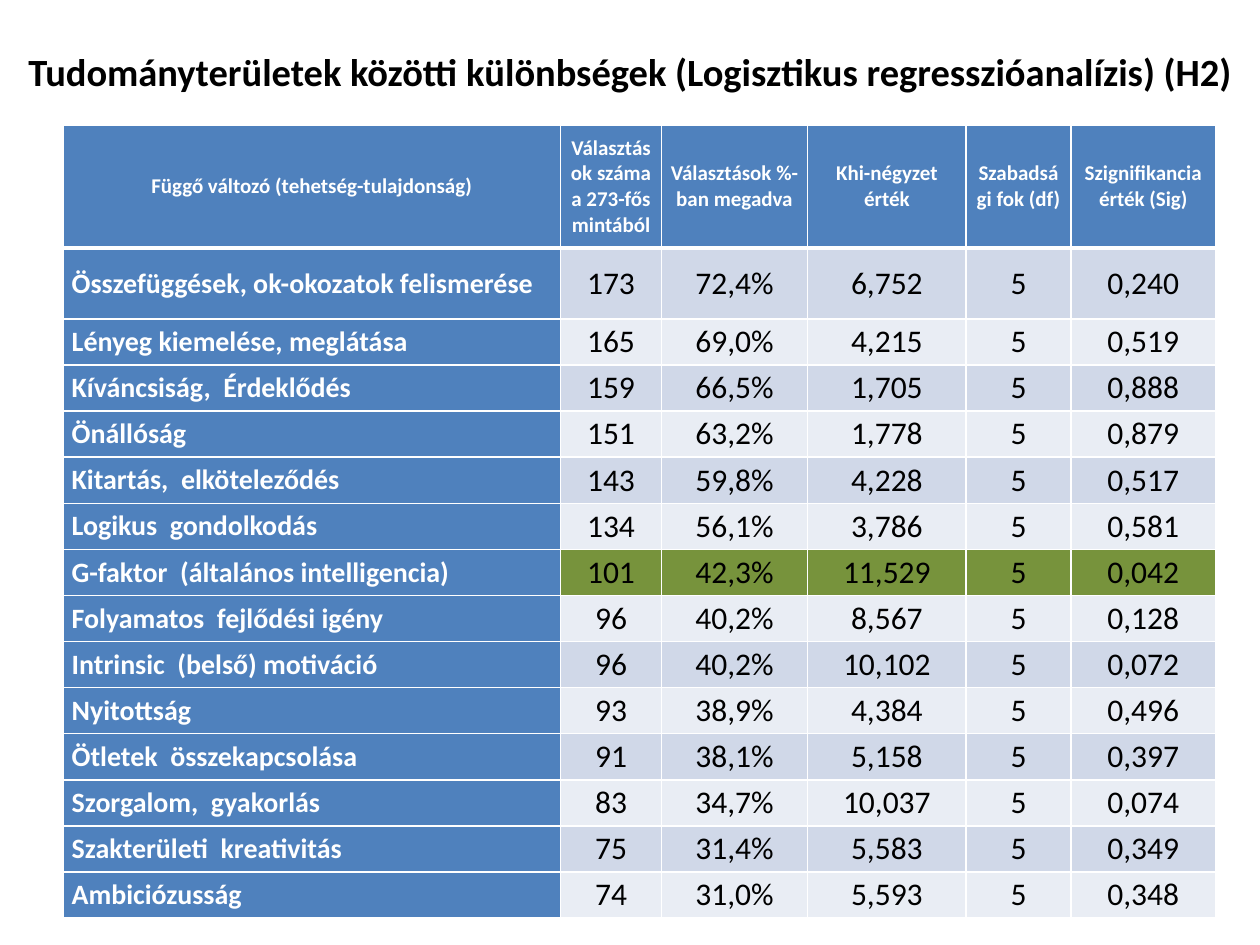
from lxml.etree import SubElement
from pptx import Presentation
from pptx.dml.color import RGBColor
from pptx.enum.text import MSO_VERTICAL_ANCHOR as Anchor, PP_PARAGRAPH_ALIGNMENT as Align
from pptx.oxml.ns import qn
from pptx.util import Pt

WHITE = RGBColor(0xFF, 0xFF, 0xFF)
BLACK = RGBColor(0x00, 0x00, 0x00)
BLUE = RGBColor(0x4F, 0x81, 0xBD)
BANDS = (RGBColor(0xE9, 0xED, 0xF4), RGBColor(0xD0, 0xD8, 0xE8))
GREEN = RGBColor(0x77, 0x93, 0x3C)

TITLE = "Tudományterületek közötti különbségek (Logisztikus regresszióanalízis) (H2)"
HEADERS = (
    "Függő változó (tehetség-tulajdonság)",
    "Választások száma a 273-fős mintából",
    "Választások %-ban megadva",
    "Khi-négyzet érték",
    "Szabadsági fok (df)",
    "Szignifikanciaérték (Sig)",
)
TRAITS = (
    ("Összefüggések, ok-okozatok felismerése", "173", "72,4%", "6,752", "5", "0,240"),
    ("Lényeg kiemelése, meglátása", "165", "69,0%", "4,215", "5", "0,519"),
    ("Kíváncsiság,  Érdeklődés", "159", "66,5%", "1,705", "5", "0,888"),
    ("Önállóság", "151", "63,2%", "1,778", "5", "0,879"),
    ("Kitartás,  elköteleződés", "143", "59,8%", "4,228", "5", "0,517"),
    ("Logikus  gondolkodás", "134", "56,1%", "3,786", "5", "0,581"),
    ("G-faktor  (általános intelligencia)", "101", "42,3%", "11,529", "5", "0,042"),
    ("Folyamatos  fejlődési igény", "96", "40,2%", "8,567", "5", "0,128"),
    ("Intrinsic  (belső) motiváció", "96", "40,2%", "10,102", "5", "0,072"),
    ("Nyitottság", "93", "38,9%", "4,384", "5", "0,496"),
    ("Ötletek  összekapcsolása", "91", "38,1%", "5,158", "5", "0,397"),
    ("Szorgalom,  gyakorlás", "83", "34,7%", "10,037", "5", "0,074"),
    ("Szakterületi  kreativitás", "75", "31,4%", "5,583", "5", "0,349"),
    ("Ambiciózusság", "74", "31,0%", "5,593", "5", "0,348"),
)
SIGNIFICANT_ROW = 7
COLUMN_WIDTHS = (284.4, 57.6, 83.5, 90.7, 59.8, 82.8)
ROW_HEIGHTS = (70.3, 40.5) + (26.35,) * (len(TRAITS) - 1)


class SlideBuilder:
    font_name = "Calibri"
    cell_margin = Pt(5)

    def __init__(self, slide):
        self.slide = slide

    def add_text(self, frame, text, size, color, bold, align):
        paragraph = frame.paragraphs[0]
        paragraph.alignment = align
        run = paragraph.add_run()
        run.text = text
        font = run.font
        font.name, font.size, font.bold = self.font_name, Pt(size), bold
        font.color.rgb = color

    def title(self, text, left, top, width, height):
        shape = self.slide.shapes.add_textbox(Pt(left), Pt(top), Pt(width), Pt(height))
        frame = shape.text_frame
        frame.word_wrap = True
        frame.vertical_anchor = Anchor.MIDDLE
        self.add_text(frame, text, 22, BLACK, True, Align.CENTER)

    def border(self, cell, side, width):
        properties = cell._tc.get_or_add_tcPr()
        line = SubElement(properties, qn(f"a:ln{side}"), w=str(Pt(width)))
        fill = SubElement(line, qn("a:solidFill"))
        SubElement(fill, qn("a:srgbClr"), val=str(WHITE))

    def cell(self, cell, text, row, column):
        cell.vertical_anchor = Anchor.MIDDLE
        cell.margin_left = cell.margin_right = self.cell_margin
        cell.margin_top = cell.margin_bottom = 0
        for side in "LRTB":
            at_header_edge = (row, side) in ((0, "B"), (1, "T"))
            self.border(cell, side, 3 if at_header_edge else 1)
        if row == 0:
            fill, style = BLUE, (12, WHITE, True, Align.CENTER)
        elif column == 0:
            fill, style = BLUE, (16, WHITE, True, Align.LEFT)
        else:
            fill = GREEN if row == SIGNIFICANT_ROW else BANDS[row % 2]
            style = (18, BLACK, False, Align.CENTER)
        cell.fill.solid()
        cell.fill.fore_color.rgb = fill
        self.add_text(cell.text_frame, text, *style)

    def table(self, rows, left, top, widths, heights):
        table = self.slide.shapes.add_table(
            len(rows), len(widths), Pt(left), Pt(top), Pt(sum(widths)), Pt(sum(heights))
        ).table
        table.horz_banding = False
        for column, width in zip(table.columns, widths):
            column.width = Pt(width)
        for row, height in zip(table.rows, heights):
            row.height = Pt(height)
        for row, texts in enumerate(rows):
            for column, text in enumerate(texts):
                self.cell(table.cell(row, column), text, row, column)


def main():
    presentation = Presentation()
    presentation.slide_width, presentation.slide_height = Pt(720), Pt(540)
    builder = SlideBuilder(presentation.slides.add_slide(presentation.slide_layouts[6]))
    builder.title(TITLE, 0, 21, 720, 39)
    builder.table((HEADERS, *TRAITS), 36, 71.5, COLUMN_WIDTHS, ROW_HEIGHTS)
    presentation.save("out.pptx")


if __name__ == "__main__":
    main()
